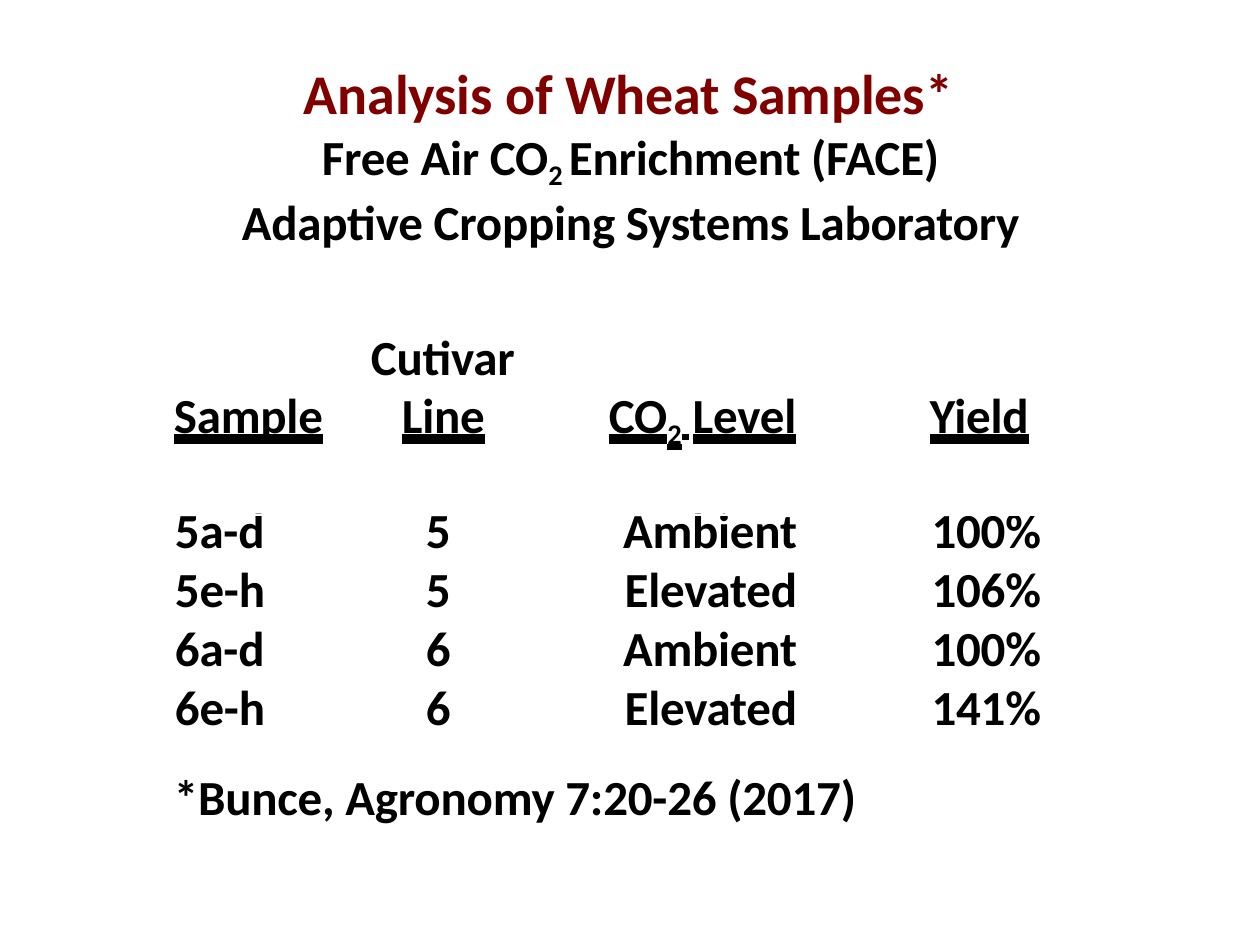
from dataclasses import dataclass

from lxml.etree import SubElement
from pptx import Presentation
from pptx.dml.color import RGBColor
from pptx.enum.text import MSO_UNDERLINE, PP_ALIGN
from pptx.oxml.ns import qn
from pptx.util import Emu, Pt


@dataclass(frozen=True)
class Theme:
    font: str = "Calibri"
    heading: RGBColor = RGBColor(0x80, 0x00, 0x00)
    ink: RGBColor = RGBColor(0x00, 0x00, 0x00)
    paper: RGBColor = RGBColor(0xFF, 0xFF, 0xFF)
    title_size: float = 32
    body_size: float = 28
    gap_size: float = 18.5
    tracking: int = -10  # hundredths of a point
    subscript: int = -21000  # thousandths of a percent


THEME = Theme()

SAMPLES = [
    ("5a-d", "5", "Ambient", "100%"),
    ("5e-h", "5", "Elevated", "106%"),
    ("6a-d", "6", "Ambient", "100%"),
    ("6e-h", "6", "Elevated", "141%"),
]


def px(n):
    """Turn pixels, 126 to the inch, into EMU."""
    return Emu(round(n * 914400 / 126))


def style_run(r, size=THEME.body_size, color=THEME.ink, underline=False, sub=False,
              tracking=THEME.tracking):
    r.font.name = THEME.font
    r.font.size = Pt(size)
    r.font.bold = True
    r.font.color.rgb = color
    rPr = r._r.get_or_add_rPr()
    rPr.set("spc", str(tracking))
    if underline:
        r.font.underline = MSO_UNDERLINE.HEAVY_LINE
    if sub:
        rPr.set("baseline", str(THEME.subscript))


def add_run(p, text, **style):
    r = p.add_run()
    r.text = text
    style_run(r, **style)


def indent(p, left):
    p._p.get_or_add_pPr().set("marL", str(px(left)))


def add_tabs(p, stops):
    tabs = SubElement(p._p.get_or_add_pPr(), qn("a:tabLst"))
    for stop in stops:
        SubElement(tabs, qn("a:tab"), pos=str(px(stop)), algn="l")


def add_textbox(s, left, top, width, height):
    tf = s.shapes.add_textbox(px(left), px(top), px(width), px(height)).text_frame
    tf.word_wrap = True
    tf.margin_left = tf.margin_right = tf.margin_bottom = 0
    tf.margin_top = px(1)
    return tf


def add_title(s):
    tf = add_textbox(s, 236, 58, 789, 189)
    p = tf.paragraphs[0]
    indent(p, 68)
    add_run(p, "Analysis of Wheat Samples*", size=THEME.title_size, color=THEME.heading)

    # Subtitle wraps after the programme name
    p = tf.add_paragraph()
    p.alignment = PP_ALIGN.CENTER
    add_run(p, "Free Air CO")
    add_run(p, "2 ", sub=True)
    add_run(p, "Enrichment (FACE) Adaptive Cropping Systems Laboratory")


def add_column_heads(s):
    tf = add_textbox(s, 173, 325, 857, 121)
    p = tf.paragraphs[0]
    indent(p, 198)
    add_run(p, "Cutivar")

    p = tf.add_paragraph()
    indent(p, 1)
    add_tabs(p, (228, 435, 756))
    for head in ("Sample", "Line"):
        add_run(p, head, underline=True)
        add_run(p, "\t")
    add_run(p, "CO", underline=True)
    add_run(p, "2", underline=True, sub=True)
    add_run(p, " ", underline=True, size=THEME.gap_size, tracking=210)
    add_run(p, "Level", underline=True)
    add_run(p, "\t")
    add_run(p, "Yield", underline=True)


def add_sample_table(s):
    # Column width, left inset, right inset, alignment
    columns = [
        (175, 5, 0, PP_ALIGN.LEFT),
        (192, 81, 0, PP_ALIGN.LEFT),
        (328, 0, 68, PP_ALIGN.RIGHT),
        (181, 0, 5, PP_ALIGN.RIGHT),
    ]
    heights = (54, 59, 59, 54)
    table = s.shapes.add_table(len(SAMPLES), len(columns), px(170), px(515),
                               px(sum(c[0] for c in columns)), px(sum(heights))).table
    table.first_row = table.horz_banding = False
    for column, (width, *_) in zip(table.columns, columns):
        column.width = px(width)
    for i, (sample, height) in enumerate(zip(SAMPLES, heights)):
        table.rows[i].height = px(height)
        for j, (text, (_, left, right, align)) in enumerate(zip(sample, columns)):
            cell = table.cell(i, j)
            cell.fill.solid()
            cell.fill.fore_color.rgb = THEME.paper
            cell.margin_left, cell.margin_right = px(left), px(right)
            cell.margin_top = cell.margin_bottom = 0
            p = cell.text_frame.paragraphs[0]
            p.text = text
            p.alignment = align
            p.line_spacing = Pt(29.4 if i else 26.6)
            style_run(p.runs[0])


def add_citation(s):
    p = add_textbox(s, 173, 766, 693, 62).paragraphs[0]
    indent(p, 1)
    add_run(p, "*Bunce, Agronomy 7:20-26 (2017)")


def main():
    prs = Presentation()
    prs.slide_width, prs.slide_height = px(1260), px(945)
    s = prs.slides.add_slide(prs.slide_layouts[6])
    add_title(s)
    add_column_heads(s)
    add_sample_table(s)
    add_citation(s)
    prs.save("out.pptx")


if __name__ == "__main__":
    main()
